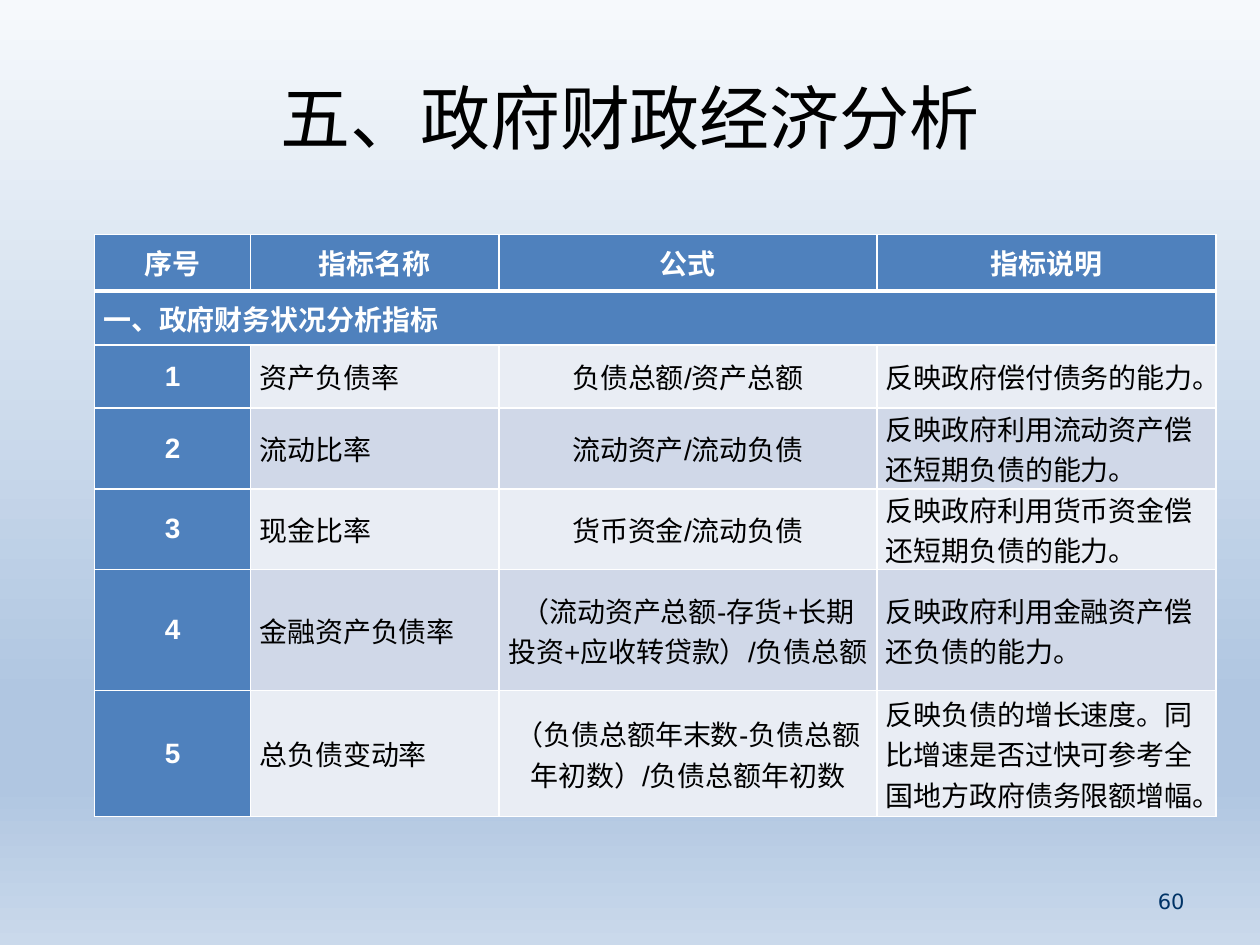
import dataclasses
import typing

import lxml.etree
import pptx
import pptx.dml.color
import pptx.enum.text
import pptx.oxml
import pptx.oxml.ns
import pptx.util

Inches = pptx.util.Inches
Align = pptx.enum.text.PP_ALIGN
Anchor = pptx.enum.text.MSO_ANCHOR
qn = pptx.oxml.ns.qn


@dataclasses.dataclass(frozen=True)
class Theme:
    font: str = "Arial"
    num_font: str = "DejaVu Sans"
    title_size: int = 40
    body_size: int = 16
    num_size: int = 12
    ink: str = "000000"
    white: str = "FFFFFF"
    navy: str = "003366"
    head: str = "4F81BD"
    bands: tuple = ("E9EDF4", "D0D8E8")
    sky: tuple = ((0, "F6F9FC"), (74, "B0C6E1"), (83, "B0C6E1"), (100, "CAD9EB"))


class Ratio(typing.NamedTuple):
    name: str
    rule: str
    note: str


THEME = Theme()
HEADS = ("序号", "指标名称", "公式", "指标说明")
SECTION = "一、政府财务状况分析指标"
RATIOS = (
    Ratio("资产负债率", "负债总额/资产总额", "反映政府偿付债务的能力。"),
    Ratio("流动比率", "流动资产/流动负债", "反映政府利用流动资产偿还短期负债的能力。"),
    Ratio("现金比率", "货币资金/流动负债", "反映政府利用货币资金偿还短期负债的能力。"),
    Ratio("金融资产负债率", "（流动资产总额-存货+长期投资+应收转贷款）/负债总额",
          "反映政府利用金融资产偿还负债的能力。"),
    Ratio("总负债变动率", "（负债总额年末数-负债总额年初数）/负债总额年初数",
          "反映负债的增长速度。同比增速是否过快可参考全国地方政府债务限额增幅。"),
)
COLS = (1.24, 1.97, 3, 2.69)
ROWS = (0.45, 0.43, 0.5, 0.5, 0.5, 0.75, 1)
ALIGNS = (Align.CENTER, Align.LEFT, Align.CENTER, Align.LEFT)


def put_text(frame, text: str, *, size: int = THEME.body_size, color: str = THEME.ink,
             font: str = THEME.font, bold: bool = False, align=Align.LEFT) -> None:
    para = frame.paragraphs[0]
    para.alignment = align
    run = para.add_run()
    run.text = text
    run.font.size = pptx.util.Pt(size)
    run.font.name = font
    run.font.bold = bold
    run.font.color.rgb = pptx.dml.color.RGBColor.from_string(color)


def place(shape, left: float, top: float, width: float, height: float) -> None:
    shape.left, shape.top = Inches(left), Inches(top)
    shape.width, shape.height = Inches(width), Inches(height)


def paint_sky(slide) -> None:
    """Fill the background with the theme's stops, running from top to bottom."""
    fill = slide.background.fill
    fill.gradient()
    fill.gradient_angle = 270
    stops = slide.background._cSld.find(".//" + qn("a:gsLst"))
    for stop in list(stops):
        stops.remove(stop)
    for spot, color in THEME.sky:
        stop = lxml.etree.SubElement(stops, qn("a:gs"), pos=str(spot * 1000))
        lxml.etree.SubElement(stop, qn("a:srgbClr"), val=color)


def edge_cell(cell, top: int, bottom: int) -> None:
    """Draw white borders; top and bottom are widths in points."""
    props = cell._tc.get_or_add_tcPr()
    sides = (("L", 1), ("R", 1), ("T", top), ("B", bottom))
    for spot, (side, width) in enumerate(sides):
        line = pptx.oxml.parse_xml(
            f'<a:ln{side} {pptx.oxml.ns.nsdecls("a")} w="{pptx.util.Pt(width)}">'
            f'<a:solidFill><a:srgbClr val="{THEME.white}"/></a:solidFill></a:ln{side}>')
        props.insert(spot, line)


def fill_cell(cell, text: str, fill: str, *, top: int = 1, bottom: int = 1, **style) -> None:
    cell.fill.solid()
    cell.fill.fore_color.rgb = pptx.dml.color.RGBColor.from_string(fill)
    cell.vertical_anchor = Anchor.MIDDLE
    cell.margin_left = cell.margin_right = Inches(0.07)
    cell.margin_top = cell.margin_bottom = 0
    edge_cell(cell, top, bottom)
    if text:
        put_text(cell.text_frame, text, **style)


def add_ratios(slide) -> None:
    table = slide.shapes.add_table(
        len(ROWS), len(COLS), Inches(0.75), Inches(1.86),
        Inches(sum(COLS)), Inches(sum(ROWS))).table
    for col, width in zip(table.columns, COLS):
        col.width = Inches(width)
    for row, height in zip(table.rows, ROWS):
        row.height = Inches(height)

    strong = {"color": THEME.white, "bold": True}
    for col, head in enumerate(HEADS):
        fill_cell(table.cell(0, col), head, THEME.head, bottom=3,
                  align=Align.CENTER, **strong)
        fill_cell(table.cell(1, col), "" if col else SECTION, THEME.head, top=3, **strong)
    table.cell(1, 0).merge(table.cell(1, len(COLS) - 1))

    for index, ratio in enumerate(RATIOS):
        band = THEME.bands[index % 2]
        for col, text in enumerate((str(index + 1), *ratio)):
            fill, style = (band, {}) if col else (THEME.head, strong)
            fill_cell(table.cell(index + 2, col), text, fill, align=ALIGNS[col], **style)


def main() -> None:
    deck = pptx.Presentation()
    deck.slide_width, deck.slide_height = Inches(10), Inches(7.5)
    slide = deck.slides.add_slide(deck.slide_layouts[5])
    paint_sky(slide)

    title = slide.shapes.title
    place(title, 0.5, 0.3, 9, 1.25)
    title.text_frame.vertical_anchor = Anchor.MIDDLE
    put_text(title.text_frame, "五、政府财政经济分析", size=THEME.title_size,
             align=Align.CENTER)

    add_ratios(slide)

    number = slide.shapes.add_textbox(Inches(7.17), Inches(6.95), Inches(2.33), Inches(0.4))
    number.text_frame.word_wrap = True
    number.text_frame.vertical_anchor = Anchor.MIDDLE
    put_text(number.text_frame, "60", size=THEME.num_size, color=THEME.navy,
             font=THEME.num_font, align=Align.RIGHT)
    deck.save("out.pptx")


if __name__ == "__main__":
    main()
